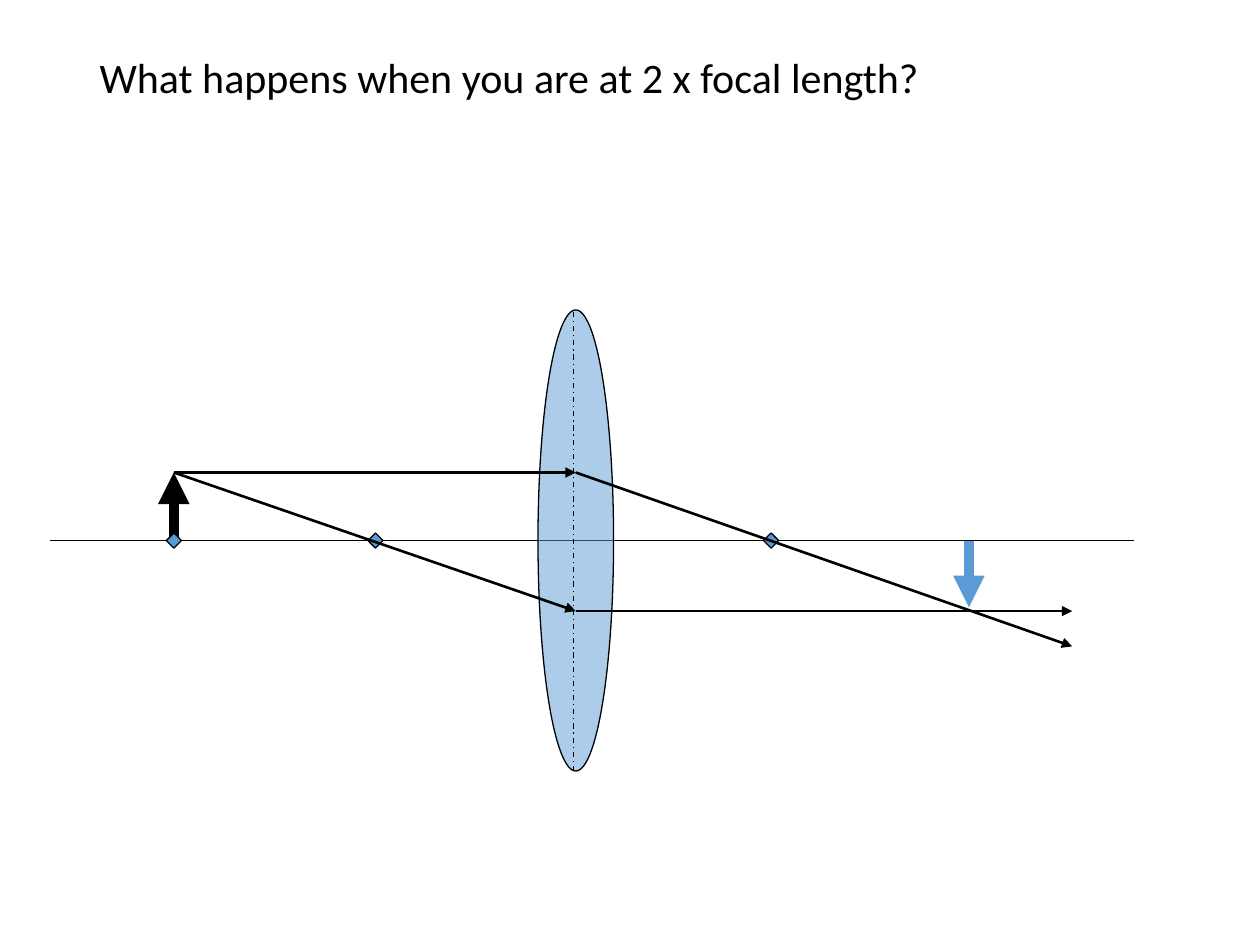
from lxml.etree import SubElement
from pptx import Presentation
from pptx.dml.color import RGBColor
from pptx.enum.dml import MSO_LINE_DASH_STYLE as Dash
from pptx.enum.shapes import MSO_CONNECTOR_TYPE as Connector, MSO_SHAPE as Shape
from pptx.enum.text import MSO_ANCHOR as Anchor, PP_ALIGN as Align
from pptx.oxml.ns import qn
from pptx.util import Inches, Pt

BLACK, BLUE = "000000", "5B9BD5"
color = RGBColor.from_string

presentation = Presentation()
presentation.slide_width, presentation.slide_height = Inches(10), Inches(7.5)
slide = presentation.slides.add_slide(presentation.slide_layouts[5])

# Grid of 100 columns by 75 rows
COLUMN = presentation.slide_width / 100
ROW = presentation.slide_height / 75

# Optical layout in grid units
AXIS, OBJECT_TIP, IMAGE_TIP, LOWER_RAY = 42.9, 37.5, 48.2, 48.5
OBJECT, NEAR_FOCUS, LENS, FAR_FOCUS, IMAGE = 13.8, 29.8, 45.7, 61.2, 76.9
RAY_END = 85.1


def add_line(start, end, width, hex_color=BLACK, arrow=True):
    (x1, y1), (x2, y2) = start, end
    connector = slide.shapes.add_connector(
        Connector.STRAIGHT, round(x1 * COLUMN), round(y1 * ROW),
        round(x2 * COLUMN), round(y2 * ROW))
    connector.line.width = Pt(width)
    connector.line.color.rgb = color(hex_color)
    if arrow:
        SubElement(connector.line._get_or_add_ln(), qn("a:tailEnd"), type="triangle")
    SubElement(connector._element.spPr, qn("a:effectLst"))
    return connector


def add_centred(kind, center_x, width, height):
    shape = slide.shapes.add_shape(
        kind, round((center_x - width / 2) * COLUMN), round((AXIS - height / 2) * ROW),
        round(width * COLUMN), round(height * ROW))
    shape.shadow.inherit = False
    shape.fill.solid()
    shape.fill.fore_color.rgb = color(BLUE)
    shape.line.color.rgb = color(BLACK)
    shape.line.width = Pt(0.75)
    return shape


# Title
title = slide.shapes.title
title_box = {"left": 6.9 * COLUMN, "top": 4 * ROW,
             "width": 86.2 * COLUMN, "height": 14.5 * ROW}
for name, value in title_box.items():
    setattr(title, name, round(value))
title.text_frame.text = "What happens when you are at 2 x focal length?"
title.text_frame.vertical_anchor = Anchor.TOP
paragraph = title.text_frame.paragraphs[0]
for name, value in {"alignment": Align.LEFT, "line_spacing": 0.9}.items():
    setattr(paragraph, name, value)
font = paragraph.runs[0].font
for name, value in {"name": "Calibri", "size": Pt(24)}.items():
    setattr(font, name, value)
font.color.rgb = color(BLACK)

# Optical axis, focal points and object
add_line((4, AXIS), (90, AXIS), 0.75, arrow=False)
for focus in (FAR_FOCUS, NEAR_FOCUS):
    add_centred(Shape.DIAMOND, focus, 1.2, 1.2)
add_line((OBJECT, AXIS), (OBJECT, OBJECT_TIP), 6)

# Half-transparent lens
lens = add_centred(Shape.OVAL, LENS, 6, 36.6)
lens_color = lens._element.spPr.find(qn("a:solidFill")).find(qn("a:srgbClr"))
SubElement(lens_color, qn("a:alpha"), val="50000")

# Point at twice the focal length
add_centred(Shape.DIAMOND, OBJECT, 1.2, 1.2)

# Rays through the lens
rays = [
    ((OBJECT, OBJECT_TIP), (LENS, OBJECT_TIP)),
    ((LENS, OBJECT_TIP), (RAY_END, 51.3)),
    ((OBJECT, OBJECT_TIP), (LENS, LOWER_RAY)),
    ((LENS, LOWER_RAY), (RAY_END, LOWER_RAY)),
]
for start, end in rays:
    add_line(start, end, 1.5)

# Inverted image and centre line of the lens
add_line((IMAGE, AXIS), (IMAGE, IMAGE_TIP), 6, BLUE)
centre_line = add_line((45.5, 61.2), (45.5, 24.5), 0.75, arrow=False)
centre_line.line.dash_style = Dash.DASH_DOT

presentation.save("out.pptx")
